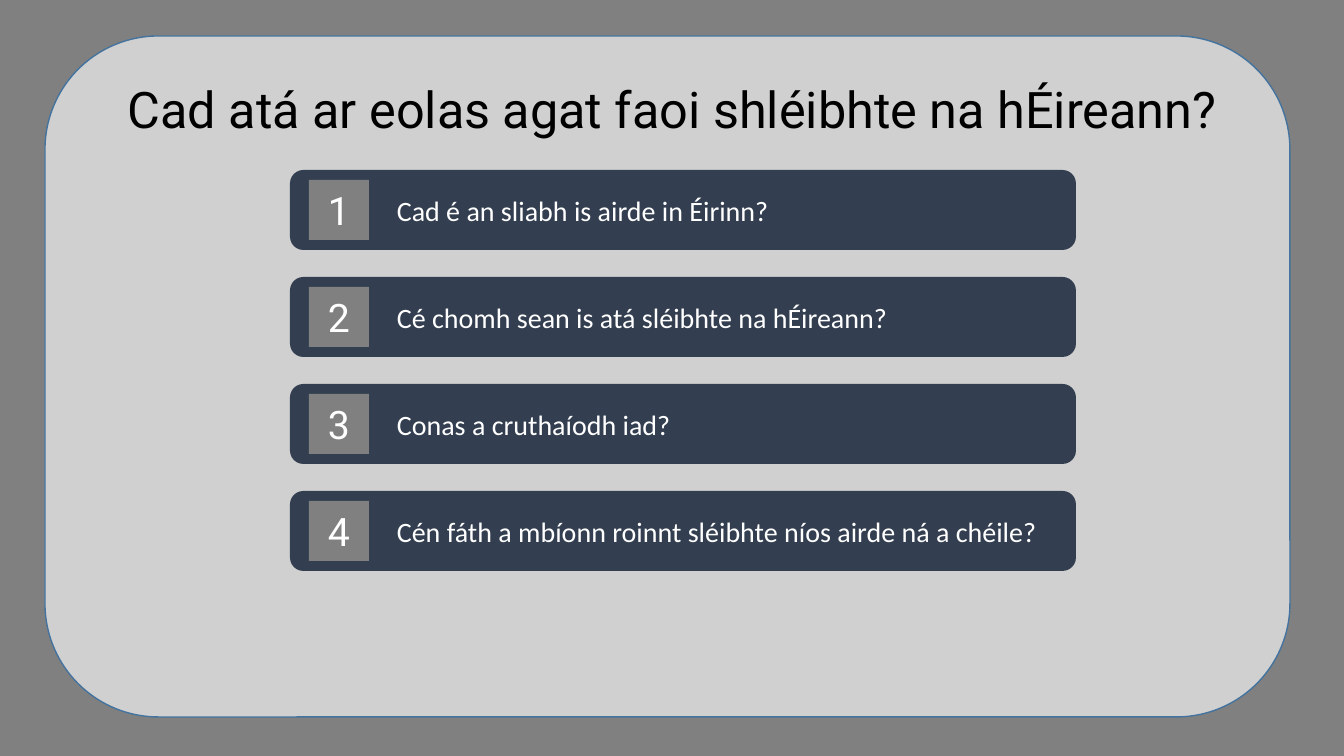
from lxml import etree
from pptx import Presentation, util as u
from pptx.dml.color import RGBColor
from pptx.enum import shapes, text
from pptx.oxml.ns import qn

EMU_PER_PX = 914400 / 100.8
COLOURS = {
    "background": "808080",
    "panel": "FFFFFF",
    "outline": "43739E",
    "bar": "333F50",
    "badge": "808080",
    "title": "000000",
    "label": "FFFFFF",
}
TITLE = "Cad atá ar eolas agat faoi shléibhte na hÉireann?"
QUESTIONS = [
    "Cad é an sliabh is airde in Éirinn?",
    "Cé chomh sean is atá sléibhte na hÉireann?",
    "Conas a cruthaíodh iad?",
    "Cén fáth a mbíonn roinnt sléibhte níos airde ná a chéile?",
]


def px(length):
    return u.Emu(round(length * EMU_PER_PX))


def colour(name):
    return RGBColor.from_string(COLOURS[name])


def add_block(slide, preset, box, fill):
    """Add a flat filled shape without an outline."""
    block = slide.shapes.add_shape(preset, *map(px, box))
    block.shadow.inherit = False
    block.fill.solid()
    block.fill.fore_color.rgb = colour(fill)
    block.line.fill.background()
    return block


def write(holder, wording, font, size, ink, align):
    frame = holder.text_frame
    frame.text = wording
    frame.word_wrap = True
    frame.vertical_anchor = text.MSO_ANCHOR.MIDDLE
    paragraph = frame.paragraphs[0]
    paragraph.alignment = align
    for run in paragraph.runs:
        run.font.name = font
        run.font.size = u.Pt(size)
        run.font.color.rgb = colour(ink)
    return frame


def add_panel(slide, box):
    panel = add_block(slide, shapes.MSO_SHAPE.ROUNDED_RECTANGLE, box, "panel")
    tint = panel.fill._xPr.find(qn("a:solidFill"))[0]
    etree.SubElement(tint, qn("a:alpha")).set("val", "63000")
    panel.line.color.rgb = colour("outline")
    panel.line.width = u.Pt(1)


def add_title(slide, box):
    title = slide.shapes.add_textbox(*map(px, box))
    frame = write(title, TITLE, "Roboto", 36, "title", text.PP_ALIGN.CENTER)
    frame.paragraphs[0].line_spacing = 0.9


def add_question(slide, box, number, question):
    left, top, _, height = box
    bar = add_block(slide, shapes.MSO_SHAPE.ROUNDED_RECTANGLE, box, "bar")
    frame = write(bar, question, "Calibri", 20, "label", text.PP_ALIGN.LEFT)
    frame.margin_left = px(103)

    side = 60
    badge_box = (left + 19, top + (height - side) / 2, side, side)
    badge = add_block(slide, shapes.MSO_SHAPE.RECTANGLE, badge_box, "badge")
    write(badge, str(number), "Roboto", 28, "label", text.PP_ALIGN.CENTER)


def add_questions(slide, box):
    """Stack the question bars evenly from the top to the bottom of the box."""
    left, top, width, height = box
    bar_height = 80
    pitch = (height - bar_height) / (len(QUESTIONS) - 1)
    for index, question in enumerate(QUESTIONS):
        bar_box = (left, top + index * pitch, width, bar_height)
        add_question(slide, bar_box, index + 1, question)


def main():
    deck = Presentation()
    deck.slide_width, deck.slide_height = px(1344), px(756)
    slide = deck.slides.add_slide(deck.slide_layouts[6])
    slide.background.fill.solid()
    slide.background.fill.fore_color.rgb = colour("background")
    add_panel(slide, (45, 36, 1245, 681))
    add_title(slide, (117, 80, 1111, 64))
    add_questions(slide, (290, 170, 786, 401))
    deck.save("out.pptx")


if __name__ == "__main__":
    main()
